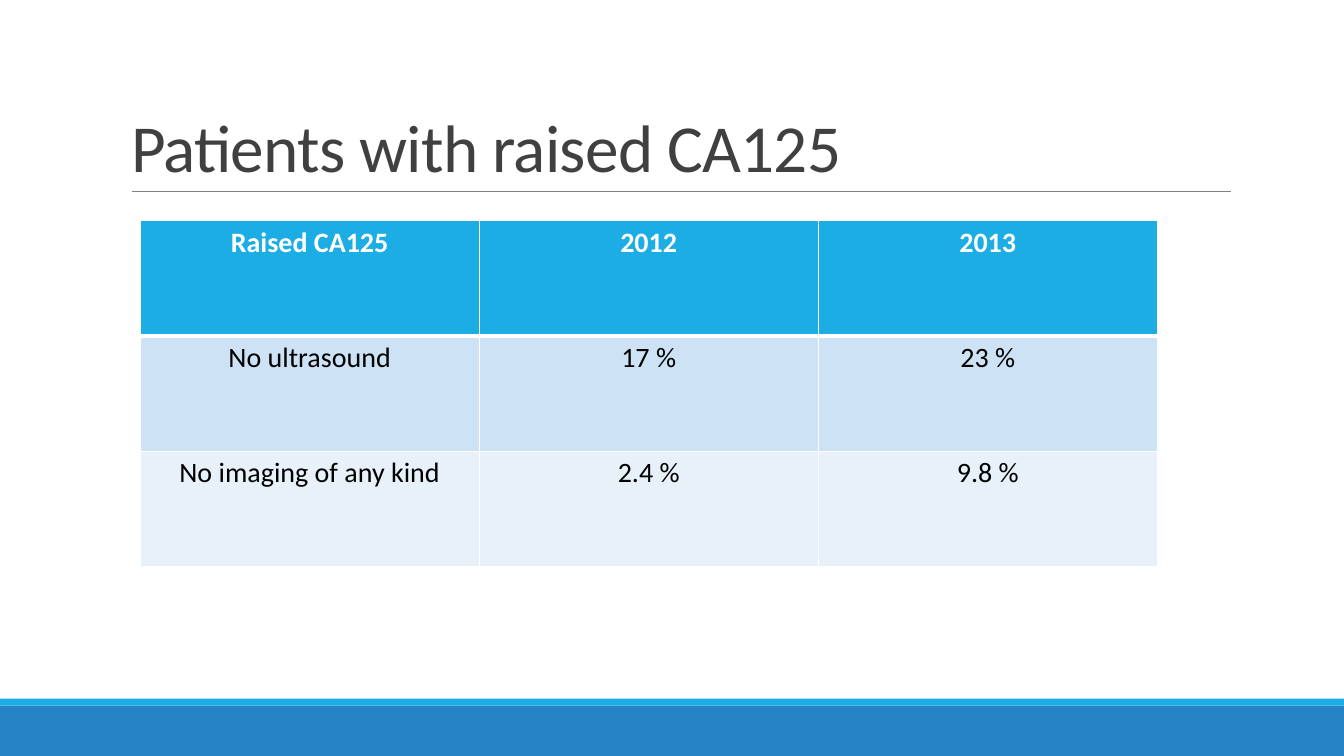
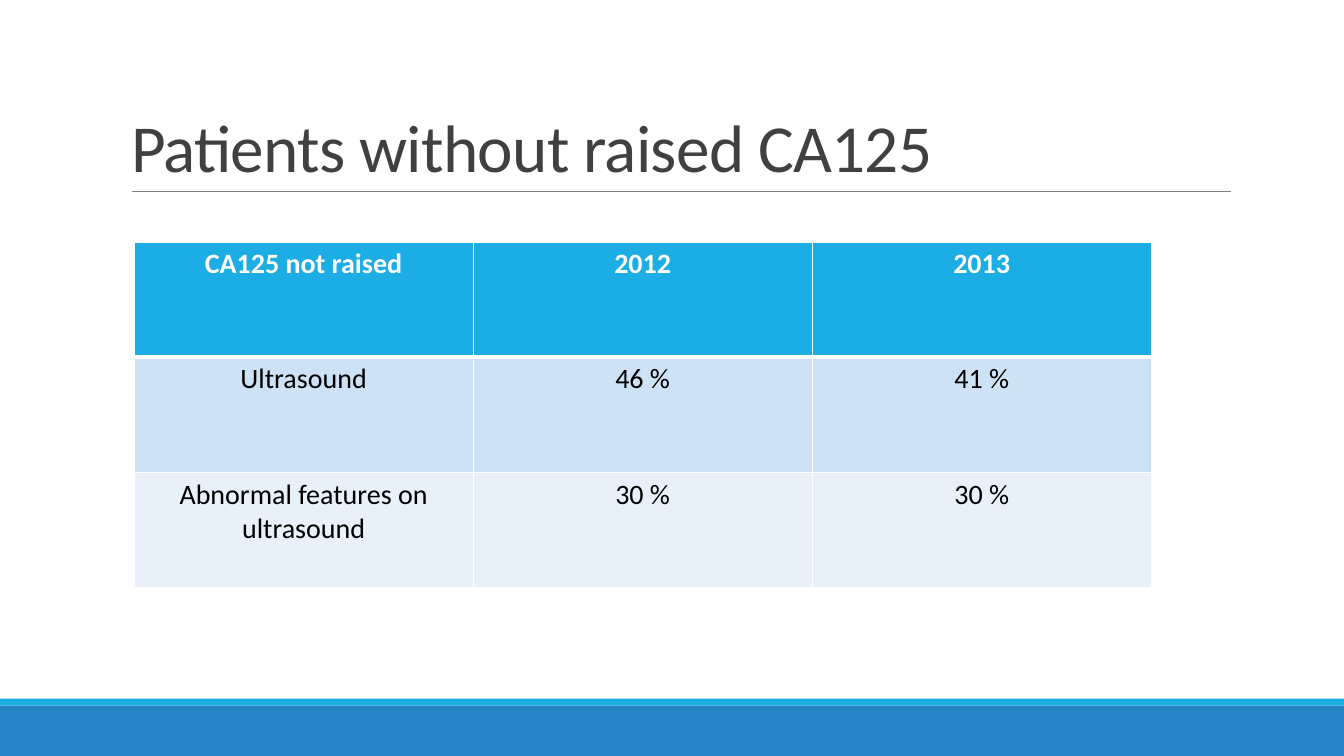
import dataclasses

import lxml.etree
import pptx
import pptx.dml.color
import pptx.enum.shapes
import pptx.enum.text
import pptx.oxml.ns
import pptx.util

WIDE, HIGH = pptx.util.Inches(13.333), pptx.util.Inches(7.5)
FACE = "Calibri"
WHITE, BLACK, GREY, RULE = "FFFFFF", "000000", "404040", "808080"
SKY, BLUE = "1CADE4", "2683C6"
FILLS = [SKY, "CDE3F5", "E8F1FA"]  # one per table row
HEAD = {"size": pptx.util.Pt(20), "bold": True, "name": FACE}
BODY = {**HEAD, "bold": False}
TITLE = {"size": pptx.util.Pt(48), "bold": False, "name": FACE}


@dataclasses.dataclass(frozen=True)
class Box:
    """Place and size in percent of the slide's width and height."""
    left: float
    top: float
    wide: float
    high: float

    def emu(self) -> tuple[int, int, int, int]:
        return (int(WIDE * self.left / 100), int(HIGH * self.top / 100),
                int(WIDE * self.wide / 100), int(HIGH * self.high / 100))


@dataclasses.dataclass(frozen=True)
class Page:
    title: str
    left: float
    top: float
    rows: list[list[str]]


NAME = Box(9, 4.13, 82.5, 21.2)
LINE = Box(9.83, 25.33, 81.75, 0)
BANDS = [(Box(0, 93.33, 100, 6.67), BLUE), (Box(0, 92.4, 100, 0.93), SKY)]
GRID = (75.68, 45.73)  # table size

PAGES = [
    Page("Patients with raised CA125", 10.43, 29.2, [
        ["Raised CA125", "2012", "2013"],
        ["No ultrasound", "17 %", "23 %"],
        ["No imaging of any kind", "2.4 %", "9.8 %"]]),
    Page("Patients without raised CA125", 9.98, 32, [
        ["CA125 not raised", "2012", "2013"],
        ["Ultrasound", "46 %", "41 %"],
        ["Abnormal features on ultrasound", "30 %", "30 %"]]),
]


def tint(code: str) -> pptx.dml.color.RGBColor:
    return pptx.dml.color.RGBColor.from_string(code)


def style(font, code: str, form: dict) -> None:
    for key, val in form.items():
        setattr(font, key, val)
    font.color.rgb = tint(code)


def frame(slide) -> None:
    # Footer bands
    for box, code in BANDS:
        band = slide.shapes.add_shape(
            pptx.enum.shapes.MSO_SHAPE.RECTANGLE, *box.emu())
        band.shadow.inherit = False
        band.fill.solid()
        band.fill.fore_color.rgb = tint(code)
        band.line.fill.background()
    # Rule under the title
    left, top, wide, _ = LINE.emu()
    rule = slide.shapes.add_connector(
        pptx.enum.shapes.MSO_CONNECTOR.STRAIGHT, left, top, left + wide, top)
    rule.line.color.rgb = tint(RULE)
    rule.line.width = pptx.util.Pt(0.5)
    lxml.etree.SubElement(rule._element.spPr, pptx.oxml.ns.qn("a:effectLst"))


def head(slide, text: str) -> None:
    name = slide.shapes.title
    name.left, name.top, name.width, name.height = NAME.emu()
    body = name.text_frame
    body.text = text
    body.word_wrap = True
    body.auto_size = pptx.enum.text.MSO_AUTO_SIZE.NONE
    body.vertical_anchor = pptx.enum.text.MSO_ANCHOR.BOTTOM
    para = body.paragraphs[0]
    para.alignment = pptx.enum.text.PP_ALIGN.LEFT
    para.line_spacing = 0.85
    run = para.runs[0]
    style(run.font, GREY, TITLE)
    run._r.get_or_add_rPr().set("spc", "-50")


def edge(cell, widths: dict[str, float]) -> None:
    """Draw white cell borders; they must come before the fill."""
    prop = cell._tc.get_or_add_tcPr()
    for spot, (side, size) in enumerate(widths.items()):
        line = lxml.etree.Element(pptx.oxml.ns.qn(f"a:ln{side}"),
                                  w=str(pptx.util.Pt(size)))
        fill = lxml.etree.SubElement(line, pptx.oxml.ns.qn("a:solidFill"))
        lxml.etree.SubElement(fill, pptx.oxml.ns.qn("a:srgbClr"), val=WHITE)
        prop.insert(spot, line)


def table(slide, page: Page) -> None:
    rows, cols = len(page.rows), len(page.rows[0])
    box = Box(page.left, page.top, *GRID)
    grid = slide.shapes.add_table(rows, cols, *box.emu()).table
    for r, texts in enumerate(page.rows):
        for c, text in enumerate(texts):
            cell = grid.cell(r, c)
            cell.text = text
            cell.fill.solid()
            cell.fill.fore_color.rgb = tint(FILLS[r])
            para = cell.text_frame.paragraphs[0]
            para.alignment = pptx.enum.text.PP_ALIGN.CENTER
            style(para.runs[0].font, BLACK if r else WHITE, BODY if r else HEAD)
            edge(cell, {"L": 1, "R": 1, "T": 3 if r == 1 else 1,
                        "B": 1 if r else 3})


def main() -> None:
    deck = pptx.Presentation()
    deck.slide_width, deck.slide_height = WIDE, HIGH
    for page in PAGES:
        slide = deck.slides.add_slide(deck.slide_layouts[5])
        frame(slide)
        head(slide, page.title)
        table(slide, page)
    deck.save("out.pptx")


if __name__ == "__main__":
    main()
